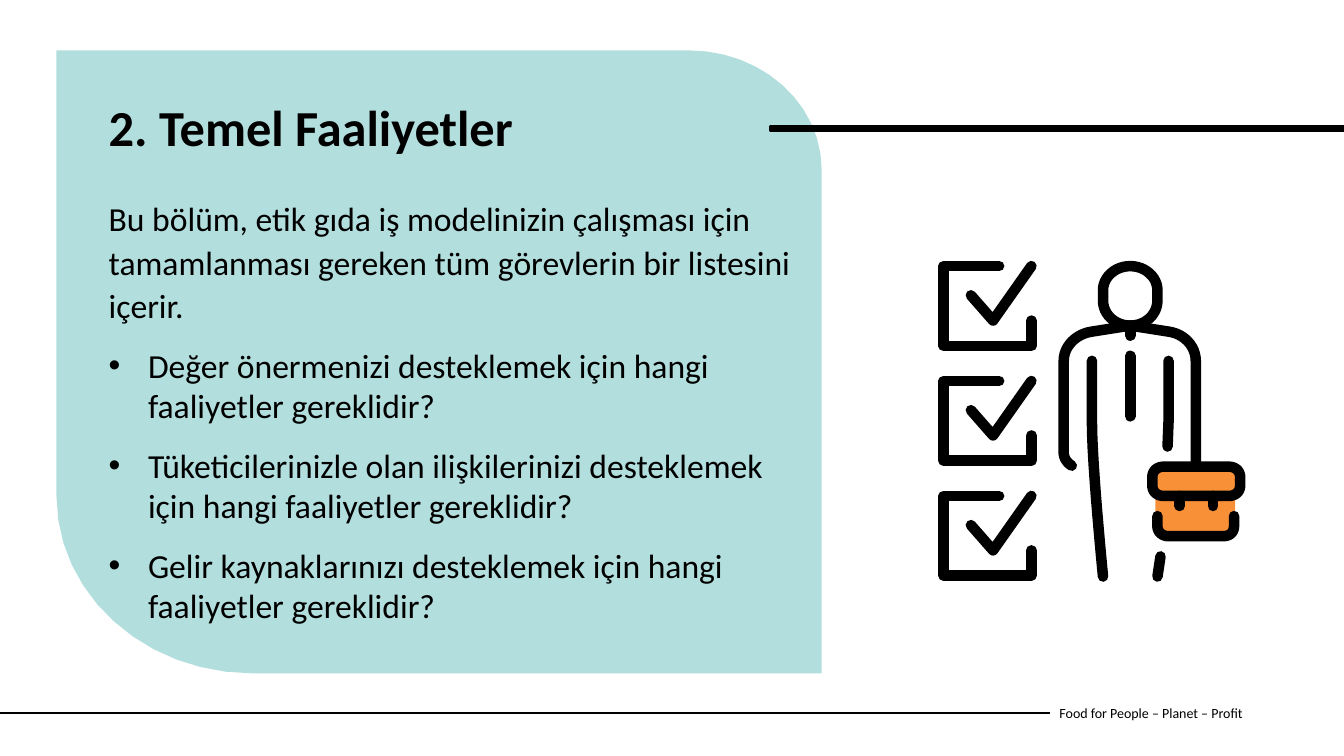
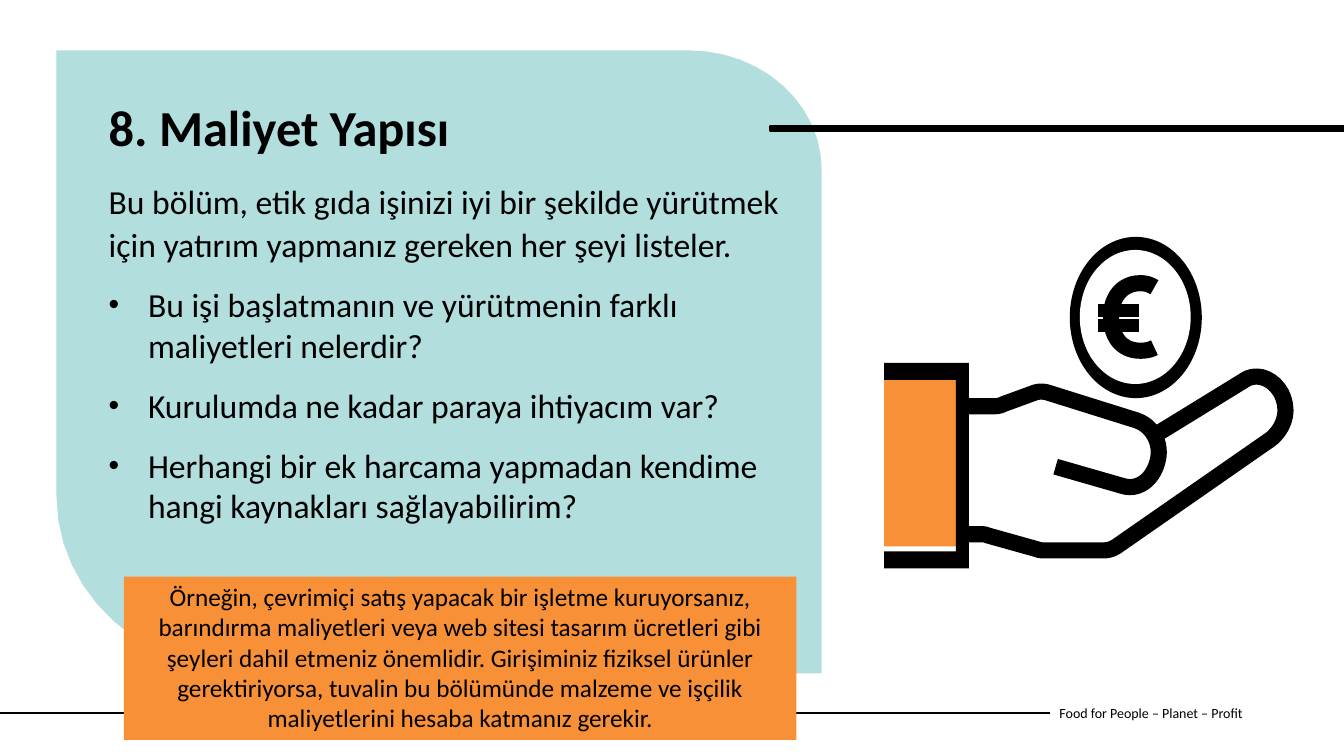
from dataclasses import dataclass

from lxml import etree
from pptx import Presentation
from pptx import util as u
from pptx.dml.color import RGBColor
from pptx.enum import shapes, text
from pptx.oxml import ns


@dataclass(frozen=True)
class Theme:
    font: str = "Calibri"
    ink: RGBColor = RGBColor(0x00, 0x00, 0x00)
    paper: RGBColor = RGBColor(0xFF, 0xFF, 0xFF)
    panel: RGBColor = RGBColor(0xB2, 0xDE, 0xDD)
    accent: RGBColor = RGBColor(0xF7, 0x90, 0x37)
    title_size: int = 36
    body_size: int = 24
    note_size: int = 18
    footer_size: int = 10
    person_stroke: float = 7.5
    hand_stroke: float = 11.5
    euro_bar: float = 9


THEME = Theme()
FOOTER = "Food for People – Planet – Profit"
LEAD = {"line_spacing": 1.07, "space_after": u.Pt(8)}
BULLET = {"space_before": u.Pt(6), "space_after": u.Pt(8)}
CURVE_STEPS = 12

# In a path, a pair is a corner and six numbers are a cubic curve.
PANEL = [(8.15, 6.68), (2.5, 6.68), (1.43, 6.68, 0.56, 5.89, 0.56, 4.92),
         (0.56, 0.5), (6.83, 0.5), (7.56, 0.5, 8.15, 1.03, 8.15, 1.69)]

CHECK_PITCH = 1.14
CHECK_BOX = [(10.23, 3.18), (10.23, 3.43), (9.36, 3.43), (9.36, 2.64), (9.91, 2.64)]
CHECK_TICK = [(9.63, 2.93), (9.85, 3.18), (10.23, 2.64)]
HEAD = [(10.94, 2.88), (10.94, 2.75, 11.06, 2.64, 11.21, 2.64),
        (11.36, 2.64, 11.48, 2.75, 11.48, 2.88), (11.48, 2.98),
        (11.48, 3.12, 11.36, 3.23, 11.21, 3.23),
        (11.06, 3.23, 10.94, 3.12, 10.94, 2.98), (10.94, 2.88)]
SHOULDERS = [(10.63, 4.62), (10.58, 4.59, 10.55, 4.54, 10.55, 4.49), (10.55, 3.58),
             (10.55, 3.43, 10.68, 3.31, 10.83, 3.29), (11.21, 3.23), (11.59, 3.29),
             (11.74, 3.31, 11.86, 3.43, 11.86, 3.58), (11.86, 4.58)]
LEFT_LEG = [(10.83, 3.58), (10.83, 4.18), (10.83, 4.62, 10.94, 5.71, 10.94, 5.72)]
RIGHT_SIDE = [(11.59, 3.58), (11.59, 4.18), (11.58, 4.43)]
CASE_FLAP = [(11.54, 4.63), (12.19, 4.63), (12.25, 4.63, 12.3, 4.67, 12.3, 4.73),
             (12.3, 4.82), (12.3, 4.88, 12.25, 4.92, 12.19, 4.92), (11.54, 4.92),
             (11.48, 4.92, 11.43, 4.88, 11.43, 4.82), (11.43, 4.73),
             (11.43, 4.67, 11.48, 4.63, 11.54, 4.63)]
CASE_BASE = [(11.48, 5.12), (11.48, 5.22), (11.48, 5.28, 11.53, 5.32, 11.59, 5.32),
             (12.13, 5.32), (12.2, 5.32, 12.24, 5.28, 12.24, 5.22), (12.24, 5.12)]
TIE = [(11.21, 3.23), (11.21, 3.33)]
ZIP = [(11.21, 3.53), (11.21, 4.13)]
FOOT = [(11.51, 5.52), (11.48, 5.72)]
CLASPS = [[(x, 4.92), (x, 5.02)] for x in (11.7, 12.03)]

CUFF = [(8.77, 3.6), (9.61, 3.6), (9.61, 5.64), (8.77, 5.64),
        (8.77, 5.47), (9.48, 5.47), (9.48, 3.77), (8.77, 3.77)]
THUMB = [(9.61, 4.03), (9.87, 4.03), (9.9, 4.03, 9.93, 4.02, 9.95, 4.01),
         (10.25, 3.9), (10.3, 3.88, 10.35, 3.88, 10.41, 3.9), (11.27, 4.17),
         (11.43, 4.22, 11.53, 4.4, 11.48, 4.58),
         (11.43, 4.77, 11.28, 4.87, 11.13, 4.82), (10.47, 4.63)]
PALM = [(9.61, 5.3), (9.73, 5.3), (9.76, 5.3, 9.77, 5.3, 9.79, 5.31),
        (10.29, 5.45), (10.31, 5.46, 10.34, 5.46, 10.36, 5.46), (10.95, 5.46),
        (11, 5.46, 11.05, 5.44, 11.09, 5.41), (12.6, 4.36),
        (12.69, 4.29, 12.75, 4.18, 12.75, 4.07),
        (12.75, 3.82, 12.5, 3.65, 12.33, 3.78), (11.5, 4.29)]
EURO_ARC = [(11.45, 2.85), (11.4, 2.82, 11.36, 2.81, 11.31, 2.81),
            (11.13, 2.81, 11.02, 2.95, 11.02, 3.14),
            (11.02, 3.35, 11.13, 3.48, 11.31, 3.48),
            (11.37, 3.48, 11.41, 3.47, 11.45, 3.45)]
EURO_BARS = [[(10.89, y), (11.3, y)] for y in (3.08, 3.23)]


def apply_format(target, values):
    for name, value in values.items():
        setattr(target, name, value)


def flatten(path):
    """Turn corners and cubic curves into points in EMU."""
    points = [path[0]]
    for step in path[1:]:
        if len(step) == 2:
            points.append(step)
            continue
        corners = [points[-1], step[:2], step[2:4], step[4:]]
        for index in range(1, CURVE_STEPS + 1):
            t = index / CURVE_STEPS
            weights = ((1 - t) ** 3, 3 * t * (1 - t) ** 2, 3 * t * t * (1 - t), t ** 3)
            points.append(tuple(sum(w * c[axis] for w, c in zip(weights, corners))
                                for axis in (0, 1)))
    return [(u.Inches(x), u.Inches(y)) for x, y in points]


def add_outline(parent, path, closed):
    points = flatten(path)
    builder = parent.build_freeform(*points[0])
    builder.add_line_segments(points[1:], close=closed)
    shape = builder.convert_to_shape()
    shape.shadow.inherit = False
    return shape


def paint(shape, color):
    shape.shadow.inherit = False
    shape.fill.solid()
    shape.fill.fore_color.rgb = color
    shape.line.fill.background()


def add_filled_path(parent, path, color):
    paint(add_outline(parent, path, True), color)


def add_preset(parent, kind, at, color):
    shape = parent.add_shape(kind, *map(u.Inches, at))
    paint(shape, color)
    return shape


def add_line(parent, start, end, width):
    line = parent.add_connector(shapes.MSO_CONNECTOR.STRAIGHT,
                                *map(u.Inches, (*start, *end)))
    etree.SubElement(line._element.spPr, ns.qn("a:effectLst"))
    set_line(line, width)
    return line


def set_line(shape, width):
    shape.line.color.rgb = THEME.ink
    shape.line.width = u.Pt(width)


def add_stroke(parent, path, width, cap="rnd"):
    """Draw an open path as a pen line; two points make a connector."""
    if len(path) == 2:
        shape = add_line(parent, *path, width)
    else:
        shape = add_outline(parent, path, False)
        shape.fill.background()
        set_line(shape, width)
    outline = shape.line._get_or_add_ln()
    outline.set("cap", cap)
    etree.SubElement(outline, ns.qn("a:round"))


def write(para, words, size, bold=False):
    span = para.add_run()
    span.text = words
    apply_format(span.font, {"name": THEME.font, "size": u.Pt(size), "bold": bold})
    span.font.color.rgb = THEME.ink


def add_bullet(para, size_percent):
    props = para._p.get_or_add_pPr()
    props.set("marL", str(u.Inches(0.39)))
    props.set("indent", str(u.Inches(-0.39)))
    for tag, name, value in (("a:buSzPct", "val", str(size_percent * 1000)),
                             ("a:buFont", "typeface", "Arial"),
                             ("a:buChar", "char", "•")):
        etree.SubElement(props, ns.qn(tag)).set(name, value)


def add_text_box(page, at, anchor=text.MSO_ANCHOR.TOP):
    box = page.shapes.add_textbox(*map(u.Inches, at))
    apply_format(box.text_frame, {"word_wrap": True, "vertical_anchor": anchor})
    return box.text_frame


def add_frame(page, title):
    """Add the footer, panel, bar and title that every page has."""
    footer = add_text_box(page, (10.41, 6.87, 2.73, 0.4), text.MSO_ANCHOR.MIDDLE)
    write(footer.paragraphs[0], FOOTER, THEME.footer_size)
    add_line(page.shapes, (0, 7.07), (10.41, 7.07), 1.5)
    add_filled_path(page.shapes, PANEL, THEME.panel)
    bar = add_preset(page.shapes, shapes.MSO_SHAPE.RECTANGLE,
                     (7.64, 1.25, 5.69, 0.05), THEME.ink)
    set_line(bar, 1.93)
    heading = add_text_box(page, (0.98, 0.97, 5.46, 1.09)).paragraphs[0]
    heading.line_spacing = 0.9
    write(heading, title, THEME.title_size, bold=True)


def add_body(page, at, lead, bullets, bullet_percent=100):
    frame = add_text_box(page, at)
    apply_format(frame.paragraphs[0], LEAD)
    write(frame.paragraphs[0], lead, THEME.body_size)
    for words in bullets:
        para = frame.add_paragraph()
        add_bullet(para, bullet_percent)
        apply_format(para, BULLET)
        write(para, words, THEME.body_size)


def add_note(page, at, words):
    note = add_preset(page.shapes, shapes.MSO_SHAPE.RECTANGLE, at, THEME.accent)
    apply_format(note.text_frame, {"word_wrap": True,
                                   "vertical_anchor": text.MSO_ANCHOR.TOP})
    para = note.text_frame.paragraphs[0]
    apply_format(para, {"alignment": text.PP_ALIGN.CENTER, "space_after": u.Pt(8)})
    write(para, words, THEME.note_size)


def add_worker_icon(page):
    icon = page.shapes.add_group_shape().shapes
    add_preset(icon, shapes.MSO_SHAPE.RECTANGLE, (11.46, 4.65, 0.79, 0.63), THEME.accent)
    checks = [[(x, y + row * CHECK_PITCH) for x, y in path]
              for row in range(3) for path in (CHECK_BOX, CHECK_TICK)]
    for path in (*checks, HEAD, SHOULDERS, TIE, ZIP, LEFT_LEG, RIGHT_SIDE, FOOT,
                 CASE_FLAP, CASE_BASE, *CLASPS):
        add_stroke(icon, path, THEME.person_stroke)


def add_hand_icon(page):
    icon = page.shapes.add_group_shape().shapes
    add_preset(icon, shapes.MSO_SHAPE.RECTANGLE, (8.77, 3.67, 0.73, 1.75), THEME.accent)
    add_filled_path(icon, CUFF, THEME.ink)
    for at, color in (((10.61, 2.35, 1.31, 1.6), THEME.ink),
                      ((10.71, 2.48, 1.1, 1.33), THEME.paper)):
        add_preset(icon, shapes.MSO_SHAPE.OVAL, at, color)
    for path in (THUMB, PALM, EURO_ARC):
        add_stroke(icon, path, THEME.hand_stroke, "flat")
    for path in EURO_BARS:
        add_stroke(icon, path, THEME.euro_bar, "flat")


def add_activities_page(page):
    add_frame(page, "2. Temel Faaliyetler")
    add_body(page, (0.98, 1.89, 6.96, 4.25),
             "Bu bölüm, etik gıda iş modelinizin çalışması için tamamlanması "
             "gereken tüm görevlerin bir listesini içerir.",
             ["Değer önermenizi desteklemek için hangi faaliyetler gereklidir?",
              "Tüketicilerinizle olan ilişkilerinizi desteklemek için hangi "
              "faaliyetler gereklidir?",
              "Gelir kaynaklarınızı desteklemek için hangi faaliyetler gereklidir?"])
    add_worker_icon(page)


def add_costs_page(page):
    add_frame(page, "8. Maliyet Yapısı")
    add_body(page, (0.98, 1.72, 7.17, 4.41),
             "Bu bölüm, etik gıda işinizi iyi bir şekilde yürütmek için yatırım "
             "yapmanız gereken her şeyi listeler.",
             ["Bu işi başlatmanın ve yürütmenin farklı maliyetleri nelerdir?",
              "Kurulumda ne kadar paraya ihtiyacım var?",
              "Herhangi bir ek harcama yapmadan kendime hangi kaynakları "
              "sağlayabilirim?"], bullet_percent=90)
    add_note(page, (1.23, 5.72, 6.67, 1.62),
             "Örneğin, çevrimiçi satış yapacak bir işletme kuruyorsanız, barındırma "
             "maliyetleri veya web sitesi tasarım ücretleri gibi şeyleri dahil etmeniz "
             "önemlidir. Girişiminiz fiziksel ürünler gerektiriyorsa, tuvalin bu "
             "bölümünde malzeme ve işçilik maliyetlerini hesaba katmanız gerekir.")
    add_hand_icon(page)


def main():
    deck = Presentation()
    apply_format(deck, {"slide_width": u.Inches(13.33), "slide_height": u.Inches(7.5)})
    for fill_page in (add_activities_page, add_costs_page):
        fill_page(deck.slides.add_slide(deck.slide_layouts[6]))
    deck.save("out.pptx")


if __name__ == "__main__":
    main()
